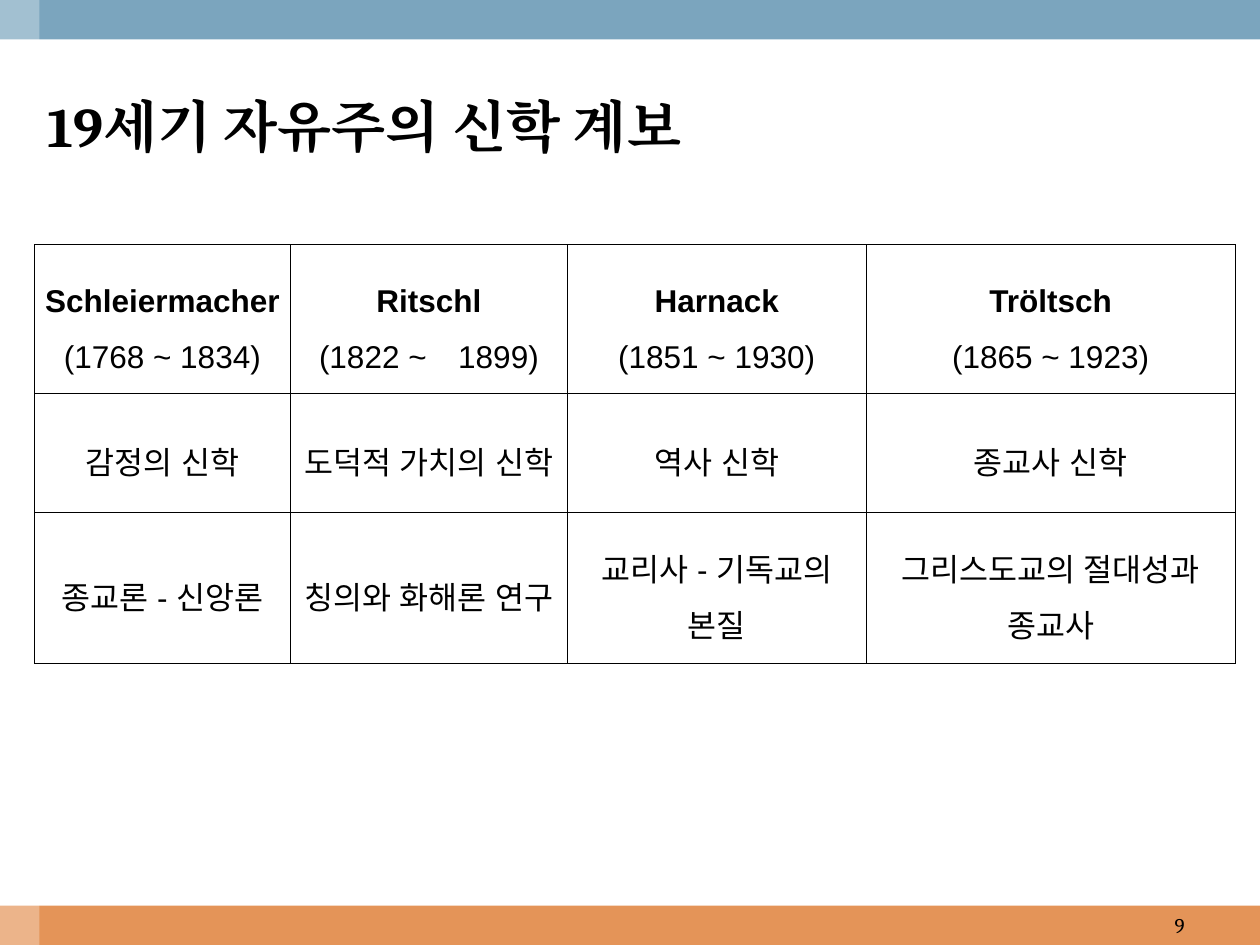
from dataclasses import dataclass

from lxml import etree
from pptx import Presentation
from pptx.dml.color import RGBColor
from pptx.enum.shapes import MSO_SHAPE
from pptx.enum.text import MSO_ANCHOR, PP_ALIGN
from pptx.oxml.ns import qn
from pptx.util import Pt

RECTANGLE = MSO_SHAPE.RECTANGLE
TOP, MIDDLE = MSO_ANCHOR.TOP, MSO_ANCHOR.MIDDLE
LEFT, CENTER, RIGHT = PP_ALIGN.LEFT, PP_ALIGN.CENTER, PP_ALIGN.RIGHT


@dataclass(frozen=True)
class Theme:
    """Colours, fonts and sizes of the slide."""
    header: str = "7BA5BE"
    footer: str = "E49458"
    white: str = "FFFFFF"
    ink: str = "000000"
    heading_font: str = "Cambria"
    body_font: str = "Arial"
    title_size: float = 32
    table_size: float = 18
    number_size: float = 12
    border: float = 0.28


THEME = Theme()
WIDTH, HEIGHT, BAND = 720, 540, 22.5
COLUMN_WIDTHS = (146.2, 158.4, 170.6, 211)
ROW_HEIGHTS = (85, 68.2, 86.4)
THEOLOGIANS = (
    ("Schleiermacher", "(1768 ~ 1834)", "감정의 신학", "종교론 - 신앙론"),
    ("Ritschl", "(1822 ~　1899)", "도덕적 가치의 신학", "칭의와 화해론 연구"),
    ("Harnack", "(1851 ~ 1930)", "역사 신학", "교리사 - 기독교의 본질"),
    ("Tröltsch", "(1865 ~ 1923)", "종교사 신학", "그리스도교의 절대성과 종교사"),
)


def apply(target, formats):
    """Set every attribute named in formats on target."""
    for name, value in formats.items():
        setattr(target, name, value)


def write(paragraph, text, font, size, bold=False, **formats):
    """Write one run into a paragraph, with one font for Latin and Korean."""
    apply(paragraph, formats)
    run = paragraph.add_run()
    run.text = text
    apply(run.font, {"name": font, "size": Pt(size), "bold": bold})
    run.font.color.rgb = RGBColor.from_string(THEME.ink)
    etree.SubElement(run._r.get_or_add_rPr(), qn("a:ea"), typeface=font)


def add_band(slide, box, color, opacity=100):
    """Add a plain band, see-through when opacity is below 100."""
    band = slide.shapes.add_shape(RECTANGLE, *map(Pt, box))
    band.shadow.inherit = False
    band.fill.solid()
    band.fill.fore_color.rgb = RGBColor.from_string(color)
    band.line.fill.background()
    if opacity < 100:
        tint = band.fill._xPr.find(qn("a:solidFill"))[0]
        etree.SubElement(tint, qn("a:alpha"), val=str(opacity * 1000))


def add_frame(slide, box):
    """Add the header and footer bands and the pale strip across them."""
    left, top, width, height = box
    add_band(slide, (left, top + height - BAND, width, BAND), THEME.footer)
    add_band(slide, (left, top, width, BAND), THEME.header)
    add_band(slide, (left, top, BAND, height), THEME.white, 30)


def add_label(slide, box, text, size, anchor, alignment, bold=False):
    """Add one line of heading text in a box."""
    frame = slide.shapes.add_textbox(*map(Pt, box)).text_frame
    apply(frame, {"word_wrap": True, "vertical_anchor": anchor})
    write(frame.paragraphs[0], text, THEME.heading_font, size, bold, alignment=alignment)


def add_borders(cell):
    """Draw a thin line on all four sides of a cell."""
    properties = cell._tc.get_or_add_tcPr()
    for side in ("lnL", "lnR", "lnT", "lnB"):
        line = etree.SubElement(properties, qn(f"a:{side}"), w=str(int(Pt(THEME.border))))
        fill = etree.SubElement(line, qn("a:solidFill"))
        etree.SubElement(fill, qn("a:srgbClr"), val=THEME.ink)


def fill_cell(cell, lines, bold_first):
    """Format a cell and write its centred lines."""
    apply(cell, {
        "vertical_anchor": MIDDLE,
        "margin_left": Pt(5), "margin_right": Pt(5),
        "margin_top": Pt(1.4), "margin_bottom": Pt(1.4),
    })
    add_borders(cell)
    cell.fill.background()
    frame = cell.text_frame
    for index, text in enumerate(lines):
        paragraph = frame.add_paragraph() if index else frame.paragraphs[0]
        write(paragraph, text, THEME.body_font, THEME.table_size,
              bold_first and index == 0, alignment=CENTER, line_spacing=1.6)


def add_genealogy(slide, box):
    """Add the table with one theologian in each column."""
    table = slide.shapes.add_table(
        len(ROW_HEIGHTS), len(THEOLOGIANS), *map(Pt, box)).table
    apply(table, {"first_row": False, "horz_banding": False})
    for row, height in zip(table.rows, ROW_HEIGHTS):
        row.height = Pt(height)
    for column, width in enumerate(COLUMN_WIDTHS):
        table.columns[column].width = Pt(width)
        name, years, theology, works = THEOLOGIANS[column]
        for row, lines in enumerate(((name, years), (theology,), (works,))):
            fill_cell(table.cell(row, column), lines, row == 0)


def main():
    """Build and save the slide."""
    deck = Presentation()
    apply(deck, {"slide_width": Pt(WIDTH), "slide_height": Pt(HEIGHT)})
    slide = deck.slides.add_slide(deck.slide_layouts[6])
    add_frame(slide, (0, 0, WIDTH, HEIGHT))
    add_label(slide, (20, 49, 409, 57), "19세기 자유주의 신학 계보",
              THEME.title_size, TOP, LEFT, bold=True)
    add_genealogy(slide, (19.7, 139.7, sum(COLUMN_WIDTHS), sum(ROW_HEIGHTS)))
    add_label(slide, (516, HEIGHT - BAND, 168, BAND), "9",
              THEME.number_size, MIDDLE, RIGHT)
    deck.save("out.pptx")


if __name__ == "__main__":
    main()
